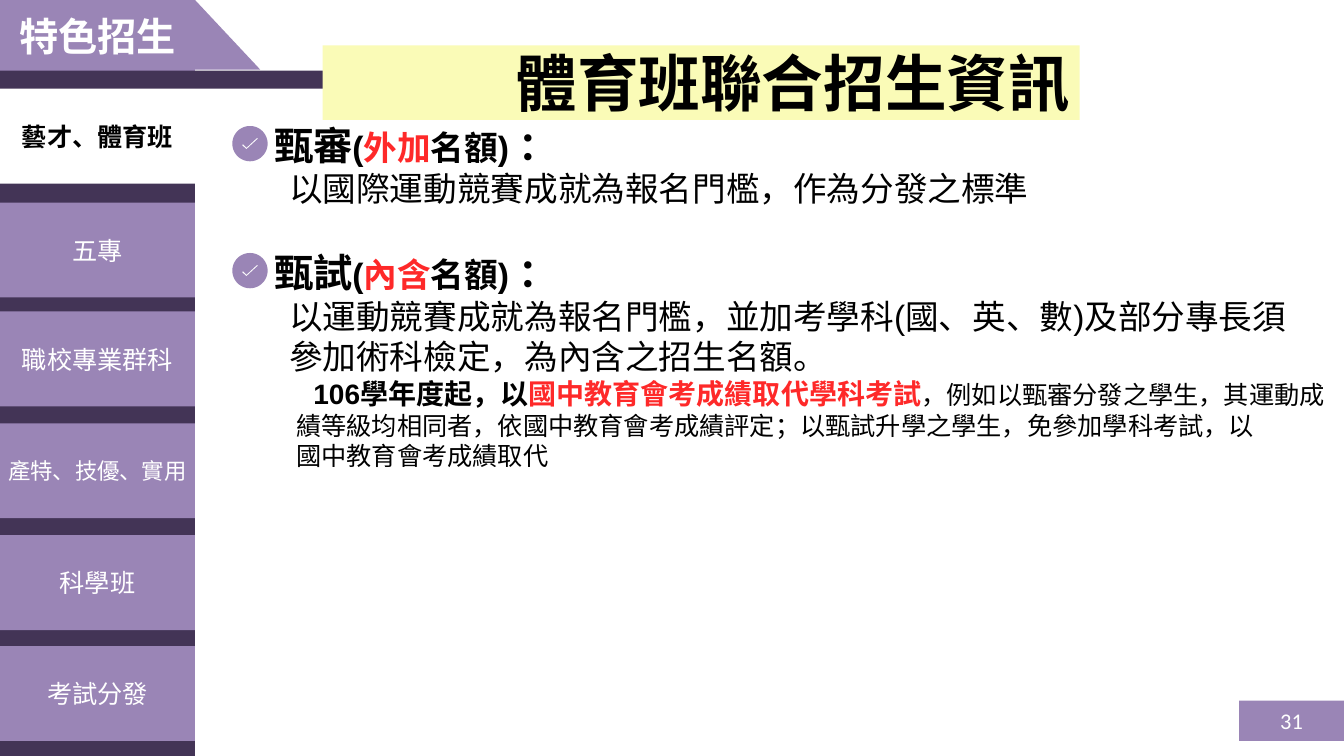
import math
import pptx
import pptx.util
import pptx.dml.color
import pptx.enum.shapes
import pptx.enum.text

RGB = pptx.dml.color.RGBColor
KIND = pptx.enum.shapes.MSO_SHAPE
ALIGN = pptx.enum.text.PP_ALIGN
ANCHOR = pptx.enum.text.MSO_ANCHOR
SIZING = pptx.enum.text.MSO_AUTO_SIZE

DARK = RGB(0x43, 0x34, 0x56)
LILAC = RGB(0x9A, 0x85, 0xB6)
CREAM = RGB(0xFA, 0xFB, 0xB7)
RED = RGB(0xFE, 0x29, 0x29)
WHITE = RGB(0xFF, 0xFF, 0xFF)
BLACK = RGB(0, 0, 0)

SIDE = 14.5
TAB = 12.55
TABS = [
    ("藝才、體育班", 11.73, 18),
    ("五專", 26.8, 18),
    ("職校專業群科", 41.2, 18),
    ("產特、技優、實用", 56, 16),
    ("科學班", 70.8, 18),
    ("考試分發", 85.47, 18),
]


def head(name, quota):
    return [(name, 28, True, BLACK), ("(", 24, True, BLACK),
            (quota, 24, True, RED), ("名額) ", 24, True, BLACK),
            ("：", 28, True, BLACK)]


def line(text, size):
    return [(text, size, False, BLACK)]


BODY = [
    (head("甄審", "外加"), "Arial", 0, 0, 0),
    (line("以國際運動競賽成就為報名門檻，作為分發之標準", 24), "Calibri", 0.15, 0, 0),
    (head("甄試", "內含"), "Arial", 0, 0, 29),
    (line("以運動競賽成就為報名門檻，並加考學科(國、英、數)及部分專長須", 24), "Arial", 0.15, 0, 0),
    (line("參加術科檢定，為內含之招生名額。", 24), "Arial", 0.15, 0, 0),
    ([("106學年度起，以", 20, True, BLACK),
      ("國中教育會考成績取代學科考試", 20, True, RED),
      ("，例如以甄審分發之學生，其運動成", 18, False, BLACK)], "Arial", 0.22, 0.17, 0),
    (line("績等級均相同者，依國中教育會考成績評定；以甄試升學之學生，免參加學科考試，以", 18), "Arial", 0.22, 0, 0),
    (line("國中教育會考成績取代", 18), "Arial", 0.22, 0, 0),
]


class Deck:
    def __init__(self):
        self.file = pptx.Presentation()
        self.file.slide_width = pptx.util.Inches(13.33)
        self.file.slide_height = pptx.util.Inches(7.5)
        self.slide = self.file.slides.add_slide(self.file.slide_layouts[5])
        self.shapes = self.slide.shapes

    def area(self, left, top, width, height):
        wide, high = self.file.slide_width, self.file.slide_height
        return [int(share * full / 100) for share, full in
                ((left, wide), (top, high), (width, wide), (height, high))]

    def paint(self, shape, fill):
        shape.shadow.inherit = False
        shape.fill.solid()
        shape.fill.fore_color.rgb = fill
        shape.line.fill.background()

    def style(self, run, size, bold, color, font="Calibri"):
        run.font.name = font
        run.font.size = pptx.util.Pt(size)
        run.font.bold = bold
        run.font.color.rgb = color

    def inset(self, frame, side=0, edge=0):
        frame.margin_left = frame.margin_right = pptx.util.Inches(side)
        frame.margin_top = frame.margin_bottom = pptx.util.Inches(edge)

    def block(self, area, fill, text="", size=18, bold=False, color=WHITE,
              font="Calibri", kind=KIND.RECTANGLE):
        shape = self.shapes.add_shape(kind, *self.area(*area))
        self.paint(shape, fill)
        if text:
            frame = shape.text_frame
            self.inset(frame)
            frame.text = text
            frame.word_wrap = True
            frame.vertical_anchor = ANCHOR.MIDDLE
            frame.paragraphs[0].alignment = ALIGN.CENTER
            self.style(frame.paragraphs[0].runs[0], size, bold, color, font)

    def title(self, area, text):
        shape = self.shapes.title
        shape.left, shape.top, shape.width, shape.height = self.area(*area)
        shape.fill.solid()
        shape.fill.fore_color.rgb = CREAM
        frame = shape.text_frame
        frame.text = text
        frame.auto_size = SIZING.NONE
        frame.vertical_anchor = ANCHOR.TOP
        self.inset(frame)
        frame.margin_right = pptx.util.Inches(0.09)
        frame.paragraphs[0].alignment = ALIGN.RIGHT
        self.style(frame.paragraphs[0].runs[0], 44, True, BLACK)
        self.shapes._spTree.append(shape._element)

    def prose(self, area, rows):
        frame = self.shapes.add_textbox(*self.area(*area)).text_frame
        frame.word_wrap = True
        self.inset(frame, 0.1, 0.05)
        frame.margin_right = 0
        for spot, (parts, font, left, first, gap) in enumerate(rows):
            para = frame.add_paragraph() if spot else frame.paragraphs[0]
            para.space_before = pptx.util.Pt(gap)
            props = para._p.get_or_add_pPr()
            props.set("marL", str(pptx.util.Inches(left)))
            props.set("indent", str(pptx.util.Inches(first)))
            for text, size, bold, color in parts:
                run = para.add_run()
                run.text = text
                self.style(run, size, bold, color, font)

    def check(self, left, top):
        mid, row = self.area(left, top, 0, 0)[:2]
        unit = self.file.slide_height / 750
        ring = [(17.5 * math.cos(math.tau * step / 72),
                 17.5 * math.sin(math.tau * step / 72)) for step in range(72)]
        tick = [(8, -5), (-3.5, 5.5), (-8, 1.5), (-7, 0.5), (-3.5, 4), (7, -5.7)]
        ring, tick = [[(mid + x * unit, row + y * unit) for x, y in path]
                      for path in (ring, tick)]
        pen = self.shapes.build_freeform(*ring[0])
        pen.add_line_segments(ring[1:], close=True)
        pen.move_to(*tick[0])
        pen.add_line_segments(tick[1:], close=True)
        self.paint(pen.convert_to_shape(), LILAC)


def main():
    deck = Deck()
    deck.block((0, 11.5, SIDE, 88.5), DARK)
    deck.block((9.53, -0.13, 9.83, 9.33), LILAC, kind=KIND.ISOSCELES_TRIANGLE)
    deck.block((0, -0.13, SIDE, 9.87), LILAC, "特色招生", 28, True)
    deck.block((0, 9.33, 35.8, 2.4), DARK)
    deck.block((92.2, 92.67, 7.8, 5.33), LILAC, "31", 16)
    for spot, (text, top, size) in enumerate(TABS):
        area = (0, top, SIDE, TAB)
        if spot:
            deck.block(area, LILAC, text, size)
        else:
            deck.block(area, WHITE, text, size, True, BLACK, "Arial")
    deck.title((24, 6, 56.33, 9.87), "體育班聯合招生資訊")
    deck.prose((19.65, 15.33, 80.25, 48), BODY)
    for top in (19, 35.8):
        deck.check(18.6, top)
    deck.file.save("out.pptx")


if __name__ == "__main__":
    main()
